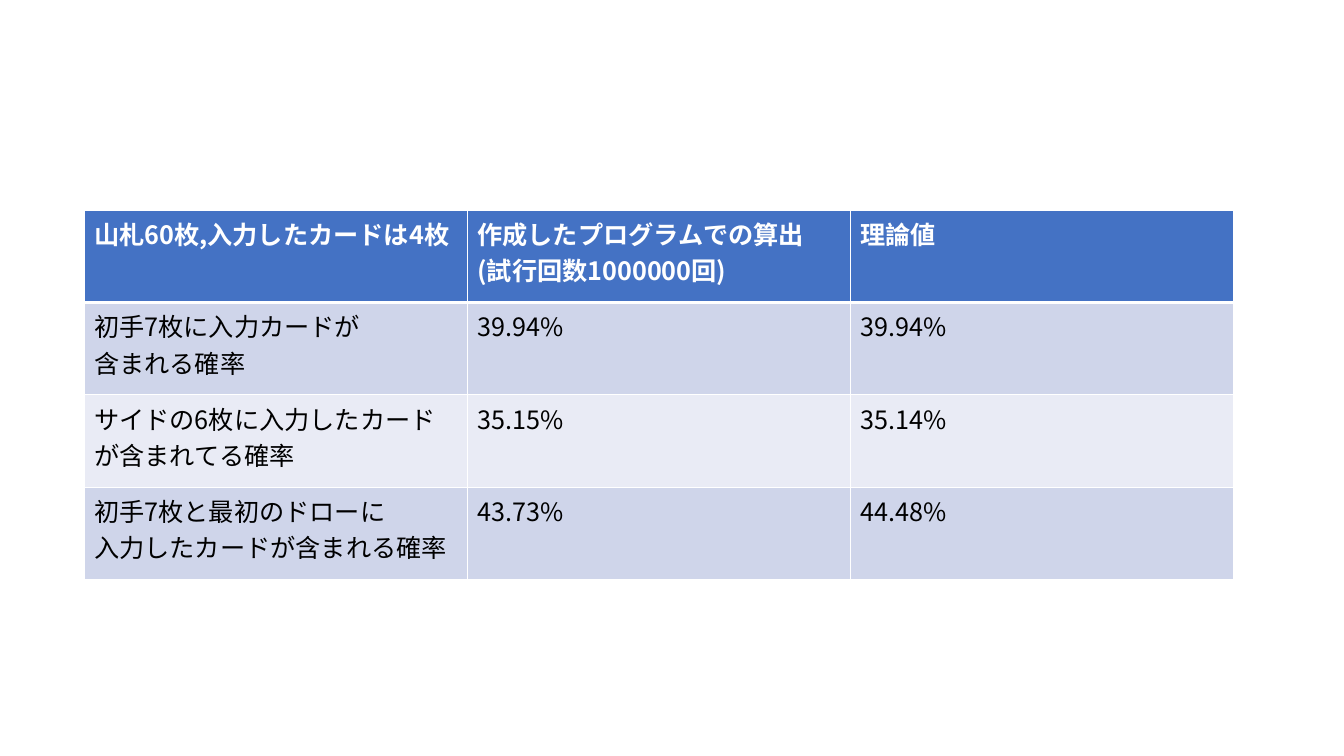
import pptx
import pptx.dml.color
import pptx.oxml.ns
import pptx.util
import lxml.etree

PX = 9525
FONT = "Noto Sans CJK JP"
COLORS = {
    "head": "4472C4",
    "odd": "CFD5EA",
    "even": "E9EBF5",
    "white": "FFFFFF",
    "black": "000000",
}
ROWS = [
    ["山札60枚,入力したカードは4枚", "作成したプログラムでの算出\n(試行回数1000000回)", "理論値"],
    ["初手7枚に入力カードが\n含まれる確率", "39.94%", "39.94%"],
    ["サイドの6枚に入力したカードが含まれてる確率", "35.15%", "35.14%"],
    ["初手7枚と最初のドローに\n入力したカードが含まれる確率", "43.73%", "44.48%"],
]


def px(num):
    """Turn pixels into EMU."""
    return pptx.util.Emu(num * PX)


def rgb(name):
    """Look up a named colour."""
    return pptx.dml.color.RGBColor.from_string(COLORS[name])


def add(node, tag, **attrs):
    """Append a drawing element to a node."""
    return lxml.etree.SubElement(node, pptx.oxml.ns.qn(tag), attrs)


def write(frame, text, size=18, color="black", bold=False):
    """Fill a text frame, one paragraph per line of text."""
    frame.text = text
    for para in frame.paragraphs:
        for run in para.runs:
            run.font.size = pptx.util.Pt(size)
            run.font.bold = bold
            run.font.name = FONT
            run.font.color.rgb = rgb(color)
            add(run.font._element, "a:ea", typeface=FONT)


def edge(cell, **widths):
    """Draw white cell borders of the given point widths."""
    props = cell._tc.get_or_add_tcPr()
    for side, width in widths.items():
        line = add(props, f"a:ln{side}", w=str(pptx.util.Pt(width)))
        fill = add(line, "a:solidFill")
        add(fill, "a:srgbClr", val=COLORS["white"])


def grid(slide, left, top, width, height):
    """Place the table of probabilities in the given box."""
    count = len(ROWS[0])
    frame = slide.shapes.add_table(
        len(ROWS), count, px(left), px(top), px(width), px(height))
    table = frame.table
    for col in table.columns:
        col.width = px(width // count)
    for i, texts in enumerate(ROWS):
        table.rows[i].height = px(height // len(ROWS))
        head = i == 0
        fill = "head" if head else "odd" if i % 2 else "even"
        for j, text in enumerate(texts):
            cell = table.cell(i, j)
            edge(cell, L=1, R=1, T=3 if i == 1 else 1, B=3 if head else 1)
            cell.fill.solid()
            cell.fill.fore_color.rgb = rgb(fill)
            write(cell.text_frame, text, bold=head,
                  color="white" if head else "black")


def main():
    """Build and save the slide."""
    deck = pptx.Presentation()
    deck.slide_width, deck.slide_height = px(1280), px(720)
    slide = deck.slides.add_slide(deck.slide_layouts[6])
    grid(slide, 80, 200, 1095, 352)
    deck.save("out.pptx")


if __name__ == "__main__":
    main()
